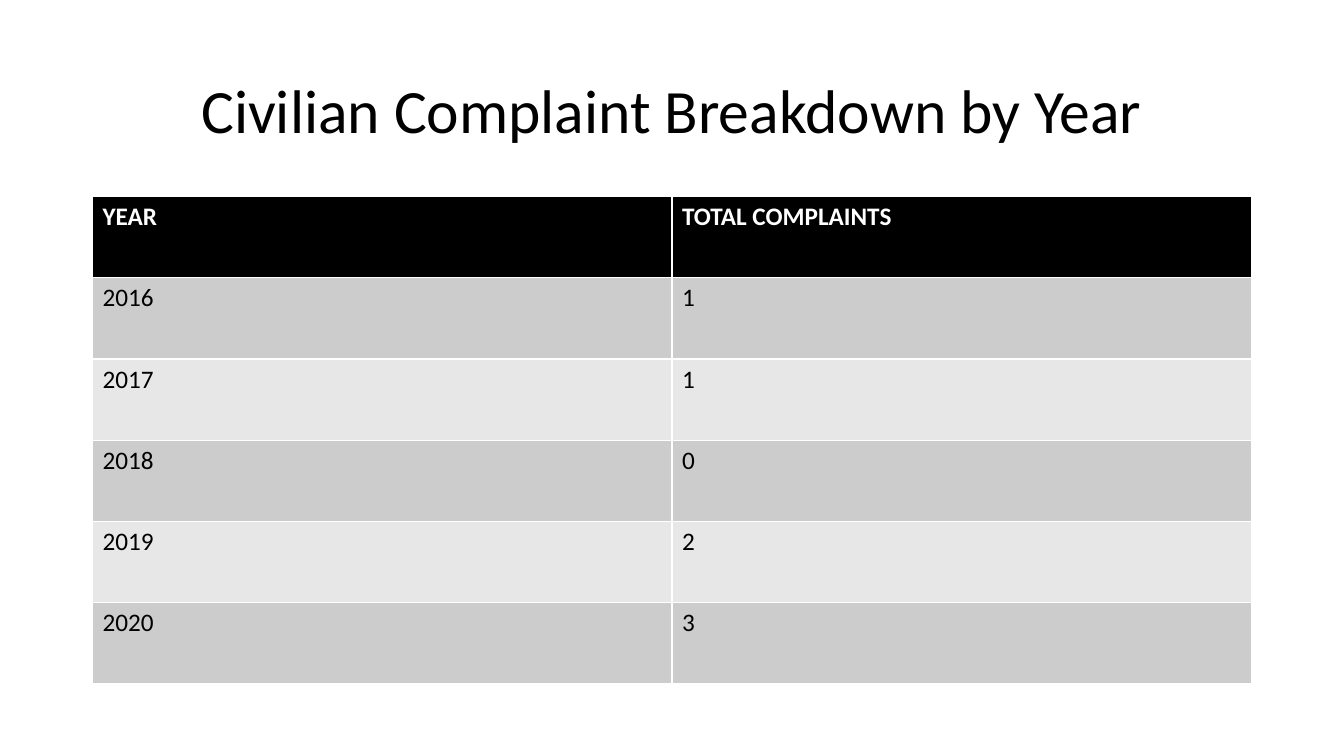
from pptx import Presentation
from pptx import util as u
from pptx.dml.color import RGBColor
from pptx.enum import text

FONT = "Calibri"
HUES = {"black": "000000", "white": "FFFFFF", "dark": "CCCCCC", "light": "E7E7E7"}
ROWS = [
    ("YEAR", "TOTAL COMPLAINTS"),
    ("2016", "1"),
    ("2017", "1"),
    ("2018", "0"),
    ("2019", "2"),
    ("2020", "3"),
]
LEFT, WIDTH = u.Cm(2.33), u.Cm(29.21)


def hue(name):
    """Return the named colour."""
    return RGBColor.from_string(HUES[name])


def style(para, size, tint, bold=False):
    """Format every run of a paragraph."""
    for run in para.runs:
        run.font.name = FONT
        run.font.size = u.Pt(size)
        run.font.bold = bold
        run.font.color.rgb = hue(tint)


def add_title(slide, words):
    """Place and format the title."""
    title = slide.shapes.title
    title.left, title.top = LEFT, u.Cm(1.01)
    title.width, title.height = WIDTH, u.Cm(3.68)
    frame = title.text_frame
    frame.text = words
    frame.word_wrap = True
    frame.vertical_anchor = text.MSO_ANCHOR.MIDDLE
    para = frame.paragraphs[0]
    para.alignment = text.PP_ALIGN.CENTER
    para.line_spacing = 0.9
    style(para, 44, "black")


def fill_cell(cell, words, row):
    """Write one cell, with a black header and banded rows below."""
    head = row == 0
    cell.text_frame.text = words
    style(cell.text_frame.paragraphs[0], 18, "white" if head else "black", head)
    cell.fill.solid()
    cell.fill.fore_color.rgb = hue("black" if head else "dark" if row % 2 else "light")


def add_grid(slide, rows):
    """Add the table of yearly totals."""
    frame = slide.shapes.add_table(
        len(rows), len(rows[0]), LEFT, u.Cm(4.95), WIDTH, u.Cm(12.29)
    )
    for r, row in enumerate(rows):
        for c, words in enumerate(row):
            fill_cell(frame.table.cell(r, c), words, r)


def main():
    """Build and save the slide."""
    deck = Presentation()
    deck.slide_width, deck.slide_height = u.Cm(33.87), u.Cm(19.05)
    slide = deck.slides.add_slide(deck.slide_layouts.get_by_name("Title Only"))
    add_title(slide, "Civilian Complaint Breakdown by Year")
    add_grid(slide, ROWS)
    deck.save("out.pptx")


if __name__ == "__main__":
    main()
